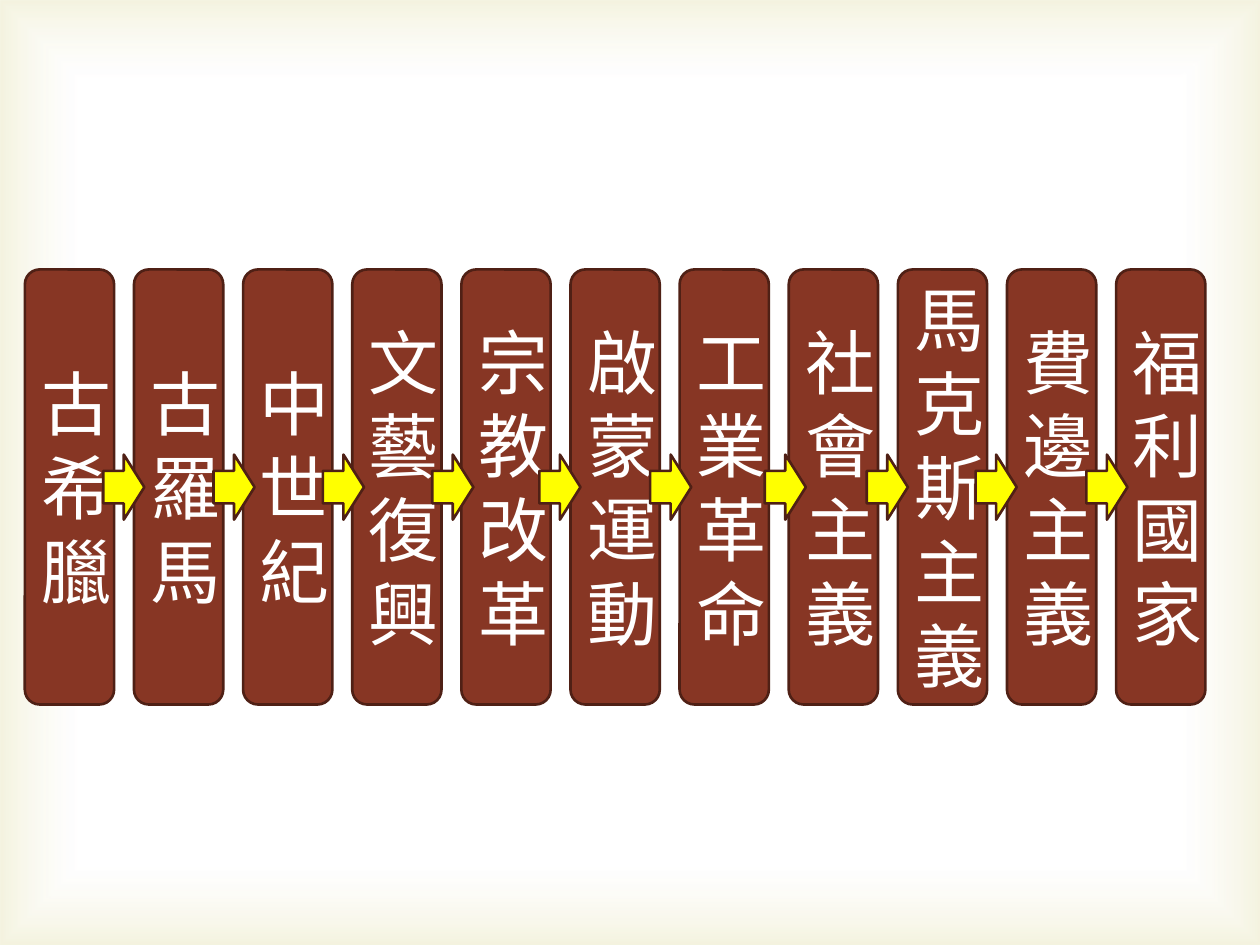
from lxml import etree
from pptx import Presentation
from pptx.dml.color import RGBColor
from pptx.enum import shapes, text
from pptx.oxml import parse_xml
from pptx.oxml.ns import nsdecls
from pptx.util import Pt

BROWN = RGBColor(0x87, 0x36, 0x24)
DARK_BROWN = RGBColor(0x4F, 0x20, 0x15)
YELLOW = RGBColor(0xFF, 0xFF, 0x00)
WHITE = RGBColor(0xFF, 0xFF, 0xFF)
KHAKI = RGBColor(0xD1, 0xCA, 0x75)

WIDTH, HEIGHT = 720, 540
ERAS = ["古希臘", "古羅馬", "中世紀", "文藝復興", "宗教改革", "啟蒙運動",
        "工業革命", "社會主義", "馬克斯主義", "費邊主義", "福利國家"]
ERA_LEFT, ERA_STEP, ERA_TOP = 14.2, 62.36, 154
ARROW_LEFTS = [59, 122, 184.5, 247, 308.2, 371.5, 437, 495.3, 557.5, 620.8]


def add_shape(s, kind, left, top, width, height, fill):
    """Add a flat filled shape with the dark brown outline."""
    sp = s.shapes.add_shape(kind, Pt(left), Pt(top), Pt(width), Pt(height))
    sp.shadow.inherit = False
    sp.fill.solid()
    sp.fill.fore_color.rgb = fill
    sp.line.color.rgb = DARK_BROWN
    sp.line.width = Pt(1.5)
    return sp


def add_backdrop(s):
    """Cover the slide with a translucent glow that darkens at the edges."""
    sp = add_shape(s, shapes.MSO_SHAPE.RECTANGLE, 0, 0, WIDTH, HEIGHT, WHITE)
    sp.line.fill.background()
    stops = "".join(
        f'<a:gs pos="{pos}000"><a:srgbClr val="{color}">'
        f'<a:alpha val="{alpha}000"/></a:srgbClr></a:gs>'
        for pos, color, alpha in [(83, WHITE, 11), (100, KHAKI, 23)])
    grad = parse_xml(
        f'<a:gradFill {nsdecls("a")} rotWithShape="1"><a:gsLst>{stops}</a:gsLst>'
        '<a:path path="rect"><a:fillToRect l="50000" t="50000" r="50000" b="50000"/>'
        '</a:path></a:gradFill>')
    solid = sp.element.spPr.find(etree.QName(grad).text.replace("gradFill", "solidFill"))
    sp.element.spPr.replace(solid, grad)


def add_era(s, left, label):
    """Add a narrow box whose label wraps to one character a line."""
    sp = add_shape(s, shapes.MSO_SHAPE.ROUNDED_RECTANGLE,
                   left, ERA_TOP, 51, 248.6, BROWN)
    tf = sp.text_frame
    tf.word_wrap = True
    tf.vertical_anchor = text.MSO_ANCHOR.MIDDLE
    p = tf.paragraphs[0]
    p.text = label
    p.alignment = text.PP_ALIGN.CENTER
    p.font.size = Pt(40)
    p.font.name = "Cambria"
    p.font.color.rgb = WHITE


def main():
    prs = Presentation()
    prs.slide_width, prs.slide_height = Pt(WIDTH), Pt(HEIGHT)
    s = prs.slides.add_slide(prs.slide_layouts[6])
    add_backdrop(s)

    # Eras in order of time
    for i, label in enumerate(ERAS):
        add_era(s, ERA_LEFT + i * ERA_STEP, label)

    # Arrows from each era to the next
    for left in ARROW_LEFTS:
        add_shape(s, shapes.MSO_SHAPE.RIGHT_ARROW, left, 259.8, 23.5, 37.2, YELLOW)

    prs.save("out.pptx")


if __name__ == "__main__":
    main()
